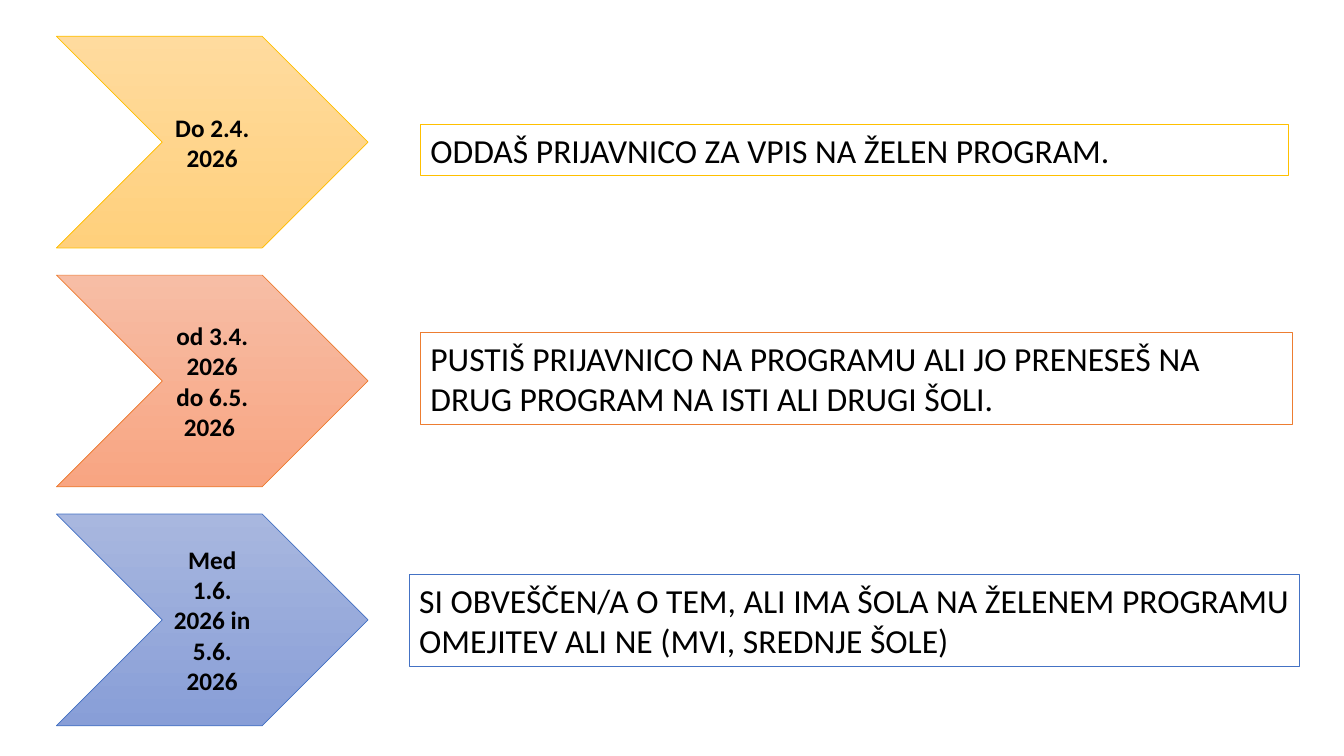
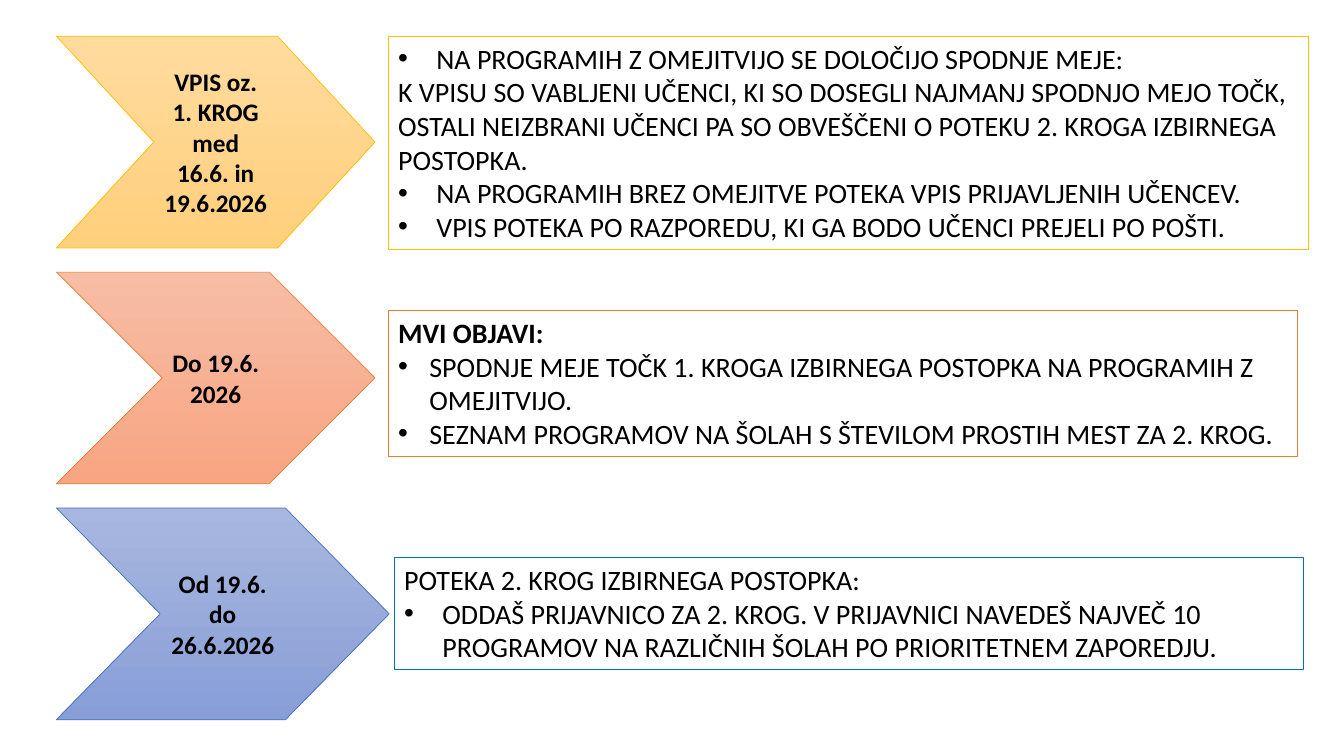
"""Build two slides of enrolment deadlines, each with three chevrons and their explanations."""
from dataclasses import dataclass

from lxml import etree
from pptx import Presentation
from pptx import util as u
from pptx.dml.color import RGBColor
from pptx.enum import shapes, text
from pptx.oxml import ns

PX = 9144
FONT = "Calibri"
BLACK = RGBColor(0x00, 0x00, 0x00)
GOLD = RGBColor(0xFF, 0xC0, 0x00)
ORANGE = RGBColor(0xED, 0x7D, 0x31)
BLUE = RGBColor(0x44, 0x72, 0xC4)
BRIGHT_BLUE = RGBColor(0x00, 0x70, 0xC0)
GOLD_TOP, GOLD_BOTTOM = RGBColor(0xFF, 0xDB, 0x9E), RGBColor(0xFF, 0xD0, 0x7C)
ORANGE_TOP, ORANGE_BOTTOM = RGBColor(0xF7, 0xBD, 0xA5), RGBColor(0xF8, 0xA5, 0x82)
BLUE_TOP, BLUE_BOTTOM = RGBColor(0xA8, 0xB7, 0xDF), RGBColor(0x88, 0x9E, 0xD7)

CHEVRON_LEFT, CHEVRON_TOP, CHEVRON_HEIGHT = 56, 36, 210
DATE_SIZE = 18


@dataclass(frozen=True)
class Palette:
    top: RGBColor
    bottom: RGBColor
    line: RGBColor


@dataclass(frozen=True)
class Line:
    text: str
    indent: int = 0
    bold: bool = False


@dataclass(frozen=True)
class Step:
    dates: tuple[str, ...]
    chevron_width: int
    notch: float
    box: tuple[int, int, int, int]
    box_line: RGBColor
    lines: tuple[Line, ...]


@dataclass(frozen=True)
class Page:
    pitch: int
    size: int
    steps: tuple[Step, ...]


PALETTES = (
    Palette(GOLD_TOP, GOLD_BOTTOM, GOLD),
    Palette(ORANGE_TOP, ORANGE_BOTTOM, ORANGE),
    Palette(BLUE_TOP, BLUE_BOTTOM, BLUE),
)

PAGES = (
    Page(237, 24, (
        Step(("Do 2.4. 2026",), 309, 0.5, (417, 124, 861, 50), GOLD, (
            Line("ODDAŠ PRIJAVNICO ZA VPIS NA ŽELEN PROGRAM."),
        )),
        Step(("od 3.4. 2026 do 6.5. 2026 ",), 309, 0.5, (417, 330, 865, 91), ORANGE, (
            Line("PUSTIŠ PRIJAVNICO NA PROGRAMU ALI JO PRENESEŠ NA "
                 "DRUG PROGRAM NA ISTI ALI DRUGI ŠOLI."),
        )),
        Step(("Med 1.6. 2026 in 5.6. 2026",), 309, 0.5, (406, 570, 883, 91), BLUE, (
            Line("SI OBVEŠČEN/A O TEM, ALI IMA ŠOLA NA ŽELENEM PROGRAMU "
                 "OMEJITEV ALI NE (MVI, SREDNJE ŠOLE)"),
        )),
    )),
    Page(234, 20, (
        Step(("VPIS oz. 1. KROG", "med 16.6. in 19.6.2026"), 316, 0.46,
             (385, 36, 913, 212), GOLD, (
            Line("NA PROGRAMIH Z OMEJITVIJO SE DOLOČIJO SPODNJE MEJE:", 38),
            Line("K VPISU SO VABLJENI UČENCI, KI SO DOSEGLI NAJMANJ SPODNJO MEJO TOČK, "
                 "OSTALI NEIZBRANI UČENCI PA SO OBVEŠČENI O POTEKU 2. KROGA IZBIRNEGA "
                 "POSTOPKA."),
            Line("NA PROGRAMIH BREZ OMEJITVE POTEKA VPIS PRIJAVLJENIH UČENCEV.", 38),
            Line("VPIS POTEKA PO RAZPOREDU, KI GA BODO UČENCI PREJELI PO POŠTI.", 38),
        )),
        Step(("Do 19.6. 2026",), 316, 0.5, (385, 308, 902, 145), ORANGE, (
            Line("MVI OBJAVI:", bold=True),
            Line("SPODNJE MEJE TOČK 1. KROGA IZBIRNEGA POSTOPKA NA PROGRAMIH Z "
                 "OMEJITVIJO.", 31),
            Line("SEZNAM PROGRAMOV NA ŠOLAH S ŠTEVILOM PROSTIH MEST ZA 2. KROG.", 31),
        )),
        Step(("Od 19.6. do 26.6.2026",), 330, 0.49, (391, 553, 902, 111), BRIGHT_BLUE, (
            Line("POTEKA 2. KROG IZBIRNEGA POSTOPKA:"),
            Line("ODDAŠ PRIJAVNICO ZA 2. KROG. V PRIJAVNICI NAVEDEŠ NAJVEČ 10 "
                 "PROGRAMOV NA RAZLIČNIH ŠOLAH PO PRIORITETNEM ZAPOREDJU.", 38),
        )),
    )),
)


def add_bullet(p, indent: int) -> None:
    pPr = p._p.get_or_add_pPr()
    pPr.set("marL", str(indent * PX))
    pPr.set("indent", str(-indent * PX))
    etree.SubElement(pPr, ns.qn("a:buFont")).set("typeface", "Arial")
    etree.SubElement(pPr, ns.qn("a:buChar")).set("char", "•")


def write_lines(tf, lines: tuple[Line, ...], size: int, align: text.PP_ALIGN) -> None:
    tf.word_wrap = True
    tf.text = "\n".join(line.text for line in lines)
    for p, line in zip(tf.paragraphs, lines):
        p.alignment = align
        if line.indent:
            add_bullet(p, line.indent)
        for r in p.runs:
            r.font.name = FONT
            r.font.size = u.Pt(size)
            r.font.bold = line.bold
            r.font.color.rgb = BLACK


def add_chevron(s, step: Step, palette: Palette, top: int) -> None:
    sp = s.shapes.add_shape(
        shapes.MSO_SHAPE.CHEVRON, CHEVRON_LEFT * PX, top * PX,
        step.chevron_width * PX, CHEVRON_HEIGHT * PX)
    sp.adjustments[0] = step.notch
    sp.shadow.inherit = False
    sp.fill.gradient()
    sp.fill.gradient_angle = 270
    for stop, color in zip(sp.fill.gradient_stops, (palette.top, palette.bottom)):
        stop.color.rgb = color
    sp.line.color.rgb = palette.line
    sp.line.width = u.Pt(0.5)
    tf = sp.text_frame
    tf.vertical_anchor = text.MSO_ANCHOR.MIDDLE
    dates = tuple(Line(date, bold=True) for date in step.dates)
    write_lines(tf, dates, DATE_SIZE, text.PP_ALIGN.CENTER)


def add_explanation(s, step: Step, size: int) -> None:
    sp = s.shapes.add_textbox(*(length * PX for length in step.box))
    sp.line.color.rgb = step.box_line
    sp.line.width = u.Pt(0.75)
    write_lines(sp.text_frame, step.lines, size, text.PP_ALIGN.LEFT)
    sp.text_frame.auto_size = text.MSO_AUTO_SIZE.SHAPE_TO_FIT_TEXT


def add_page(prs, page: Page) -> None:
    s = prs.slides.add_slide(prs.slide_layouts[6])
    for row, (step, palette) in enumerate(zip(page.steps, PALETTES)):
        add_chevron(s, step, palette, CHEVRON_TOP + row * page.pitch)
    for step in page.steps:
        add_explanation(s, step, page.size)


def main() -> None:
    prs = Presentation()
    prs.slide_width, prs.slide_height = 1333 * PX, 750 * PX
    for page in PAGES:
        add_page(prs, page)
    prs.save("out.pptx")


if __name__ == "__main__":
    main()
